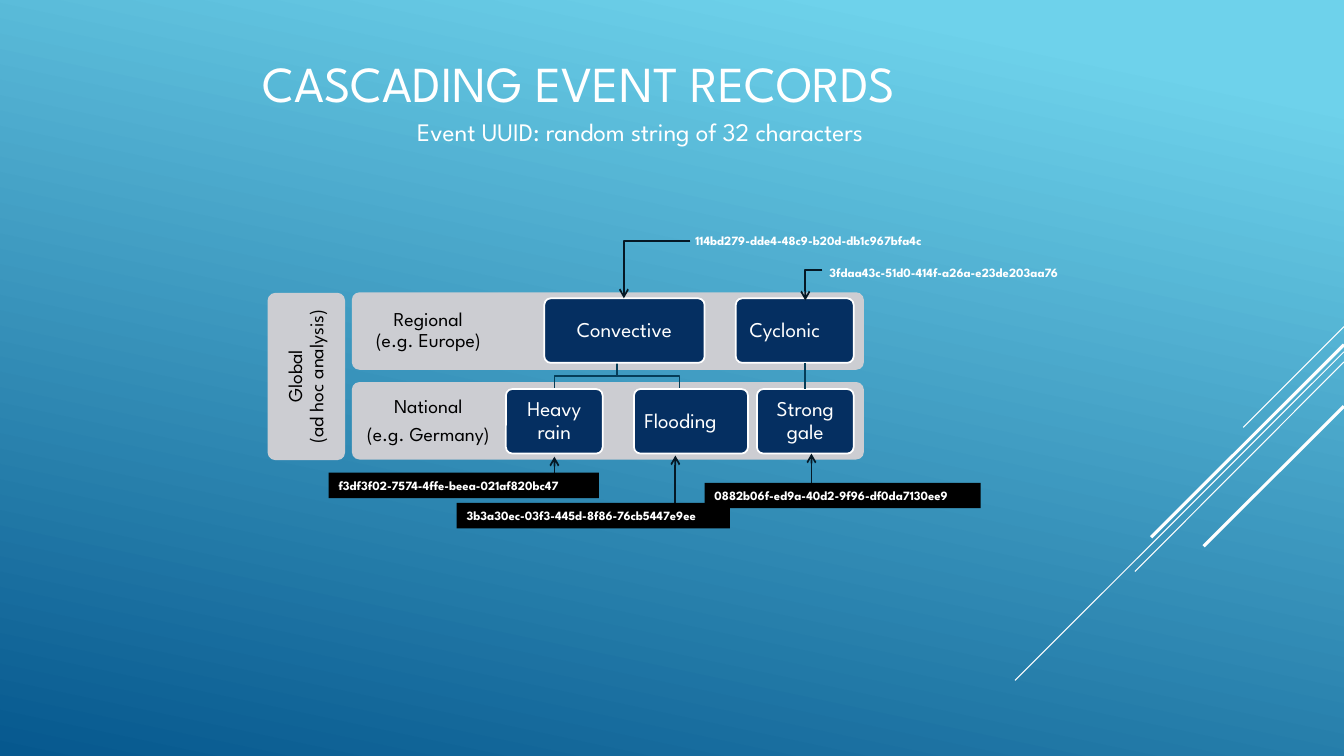
from dataclasses import dataclass

from lxml.etree import SubElement
from pptx import Presentation
from pptx.dml.color import RGBColor
from pptx.enum.shapes import MSO_CONNECTOR as Connector, MSO_SHAPE as Preset
from pptx.enum.text import MSO_ANCHOR as Anchor, PP_ALIGN as Align
from pptx.oxml.ns import qn
from pptx.util import Pt


@dataclass(frozen=True)
class Theme:
    font: str = "League Spartan"
    sky: str = "6ED2EB"
    deep: str = "06588E"
    white: str = "FFFFFF"
    black: str = "000000"
    band: str = "CCCDD2"
    navy: str = "052F61"
    branch: str = "053D58"
    arrow: str = "051825"
    title: int = 36
    subtitle: int = 18
    event: int = 15
    level: int = 14
    uuid: int = 9


THEME = Theme()
BOX_HEIGHT = 46.1
BAND_HEIGHT = 55.4
REGIONAL_TOP = 213.1
NATIONAL_TOP = 277.9
REGIONAL_BOTTOM = REGIONAL_TOP + BOX_HEIGHT

RAYS = [
    (233.3, 888, 305.3, 0.75),
    (251.3, 725, 486, 0.75),
    (258.5, 810.7, 408.2, 0.75),
    (246.2, 822.2, 383.8, 2.25),
    (290.2, 859.7, 390.2, 2.25),
]
BANDS = [
    (272.9, ["National", "(e.g. Germany)"]),
    (208.8, ["Regional\v(e.g. Europe)"]),
]
EVENTS = [
    ("Convective", 388.8, REGIONAL_TOP, 114.5, 0),
    ("Cyclonic", 525.6, REGIONAL_TOP, 84.2, 14),
    ("Heavy rain", 361.4, NATIONAL_TOP, 69.1, 0),
    ("Flooding", 452.9, NATIONAL_TOP, 81.4, 15),
    ("Strong gale", 540.7, NATIONAL_TOP, 69.1, 0),
]
BRANCH_START = 440.6
BRANCH_ENDS = [396, 485.3]
ARROWS = [
    (Connector.ELBOW, 493.2, 172.1, 445.7, 213.1),
    (Connector.ELBOW, 587.5, 193, 575.3, 214.6),
    (Connector.STRAIGHT, 396, 344.9, 396, 326.2),
    (Connector.STRAIGHT, 482.4, 359.3, 482.4, 325.4),
    (Connector.STRAIGHT, 579.6, 344.9, 579.6, 324),
]
UUIDS = [
    ("3b3a30ec-03f3-445d-8f86-76cb5447e9ee", 326.2, 359.3, 195.1, THEME.black),
    ("0882b06f-ed9a-40d2-9f96-df0da7130ee9", 503.3, 344.9, 197.3, THEME.black),
    ("f3df3f02-7574-4ffe-beea-021af820bc47", 234.7, 337.7, 193, THEME.black),
    ("114bd279-dde4-48c9-b20d-db1c967bfa4c", 489.6, 162.7, 201.6, None),
    ("3fdaa43c-51d0-414f-a26a-e23de203aa76", 585.4, 185.8, 197.3, None),
]


def rgb(color):
    return RGBColor.from_string(color)


def apply(target, values):
    for name, value in values.items():
        setattr(target, name, value)


def style_line(line, color, width):
    line.color.rgb = rgb(color)
    line.width = Pt(width)


def write(shape, paragraphs, size, color, bold=False, insets=None, layout=None, **frame_format):
    frame = shape.text_frame
    frame.text = "\n".join(paragraphs)
    apply(frame, {"word_wrap": True, **frame_format})
    if insets:
        sides = ("margin_left", "margin_top", "margin_right", "margin_bottom")
        apply(frame, dict(zip(sides, map(Pt, insets))))
    for paragraph in frame.paragraphs:
        apply(paragraph, layout or {"alignment": Align.LEFT})
        apply(paragraph.font, {"name": THEME.font, "size": Pt(size), "bold": bold})
        paragraph.font.color.rgb = rgb(color)


def add_text(slide, text, box, size, **text_format):
    shape = slide.shapes.add_textbox(*map(Pt, box))
    write(shape, [text], size, THEME.white, **text_format)


def add_panel(slide, preset, box, fill, outline=None):
    shape = slide.shapes.add_shape(preset, *map(Pt, box))
    shape.shadow.inherit = False
    shape.fill.solid()
    shape.fill.fore_color.rgb = rgb(fill)
    if outline:
        style_line(shape.line, outline, 1.25)
    else:
        shape.line.fill.background()
    return shape


def add_block(slide, paragraphs, box, fill, size, color, inset, right=0, outline=None):
    shape = add_panel(slide, Preset.ROUNDED_RECTANGLE, box, fill, outline)
    shape.adjustments[0] = 0.1
    layout = {"alignment": Align.CENTER, "line_spacing": 0.9, "space_after": Pt(5)}
    write(shape, paragraphs, size, color, insets=(inset, inset, inset + right, inset),
          layout=layout, vertical_anchor=Anchor.MIDDLE)
    return shape


def add_line(slide, kind, points, color, width, arrow=False):
    connector = slide.shapes.add_connector(kind, *map(Pt, points))
    style_line(connector.line, color, width)
    properties = connector._element.spPr
    if kind == Connector.ELBOW:
        properties.find(qn("a:prstGeom")).set("prst", "bentConnector2")
    if arrow:
        SubElement(properties.find(qn("a:ln")), qn("a:tailEnd"), type="arrow")
    SubElement(properties, qn("a:effectLst"))
    return connector


def add_branch(slide, start, end):
    middle = (REGIONAL_BOTTOM + NATIONAL_TOP) / 2
    builder = slide.shapes.build_freeform(Pt(start), Pt(REGIONAL_BOTTOM))
    corners = [(start, middle), (end, middle), (end, NATIONAL_TOP)]
    builder.add_line_segments([(Pt(x), Pt(y)) for x, y in corners], close=False)
    shape = builder.convert_to_shape()
    shape.fill.background()
    style_line(shape.line, THEME.branch, 1.25)
    shape.shadow.inherit = False


def add_uuid(slide, text, left, top, width, fill):
    box = (left, top, width, 18.2)
    if fill:
        write(add_panel(slide, Preset.RECTANGLE, box, fill), [text], THEME.uuid,
              THEME.white, bold=True, vertical_anchor=Anchor.TOP)
    else:
        add_text(slide, text, box, THEME.uuid, bold=True)


def paint_background(slide):
    fill = slide.background.fill
    fill.gradient()
    fill.gradient_angle = 258
    for stop, color, position in zip(fill.gradient_stops, (THEME.sky, THEME.deep), (0.1, 1)):
        stop.color.rgb = rgb(color)
        stop.position = position


def main():
    presentation = Presentation()
    apply(presentation, {"slide_width": Pt(960), "slide_height": Pt(540)})
    slide = presentation.slides.add_slide(presentation.slide_layouts[6])
    paint_background(slide)
    for top, left, bottom, width in RAYS:
        add_line(slide, Connector.STRAIGHT, (960, top, left, bottom), THEME.white, width)
    add_text(slide, "CASCADING EVENT RECORDS", (180.7, 13.7, 648, 90), THEME.title,
             vertical_anchor=Anchor.MIDDLE)
    add_text(slide, "Event UUID: random string of 32 characters", (290.9, 79.2, 389.5, 29),
             THEME.subtitle)
    for top, paragraphs in BANDS:
        add_block(slide, paragraphs, (251.3, top, 365.8, BAND_HEIGHT), THEME.band,
                  THEME.level, THEME.black, 8, right=256.4)
    analysis = add_block(slide, ["Global\v(ad hoc analysis)"], (159.1, 241.2, 119.5, BAND_HEIGHT),
                         THEME.band, THEME.level, THEME.black, 8)
    analysis.rotation = 270
    for end in BRANCH_ENDS:
        add_branch(slide, BRANCH_START, end)
    boxes = {}
    for name, left, top, width, right in EVENTS:
        boxes[name] = add_block(slide, [name], (left, top, width, BOX_HEIGHT), THEME.navy,
                                THEME.event, THEME.white, 4, right, THEME.white)
    gale_link = add_line(slide, Connector.STRAIGHT, (575.25, REGIONAL_BOTTOM, 575.25, NATIONAL_TOP),
                         THEME.branch, 1.25)
    gale_link.end_connect(boxes["Strong gale"], 0)
    for kind, *points in ARROWS:
        add_line(slide, kind, points, THEME.arrow, 1.25, arrow=True)
    for uuid in UUIDS:
        add_uuid(slide, *uuid)
    presentation.save("out.pptx")


if __name__ == "__main__":
    main()
